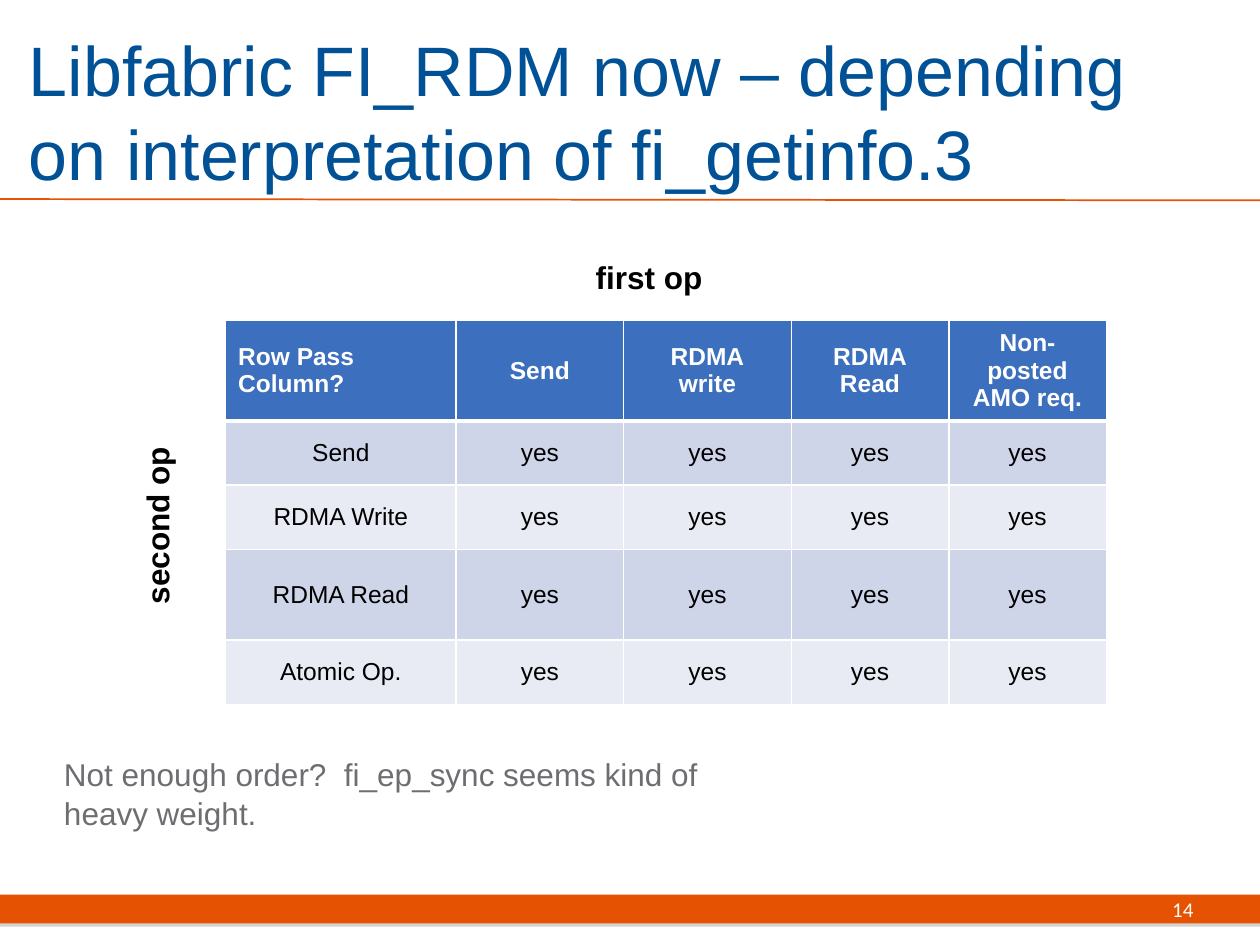
"""Build the slide on FI_RDM operation ordering as an editable table."""
import pptx
import pptx.util
import pptx.dml.color
import pptx.enum.shapes
import pptx.enum.text
import pptx.oxml
import pptx.oxml.ns
import lxml.etree

Inches, Pt = pptx.util.Inches, pptx.util.Pt
RGB = pptx.dml.color.RGBColor.from_string
ALIGN = pptx.enum.text.PP_ALIGN
MIDDLE = pptx.enum.text.MSO_ANCHOR.MIDDLE
qn = pptx.oxml.ns.qn
COLORS = {"white": "FFFFFF", "black": "000000", "orange": "E55302", "title": "005195",
          "gray": "6D6E71", "header": "3C6FBD", "odd": "CED5E8", "even": "E8EBF4"}


def write(tf, text, size, color, bold=False, align=ALIGN.LEFT, font="Arial", spacing=None):
    p = tf.paragraphs[0]
    p.alignment = align
    p.line_spacing = spacing
    for i, line in enumerate(text.split("\n")):
        if i:
            p.add_line_break()
        r = p.add_run()
        r.text = line
        r.font.size, r.font.name, r.font.bold = Pt(size), font, bold
        r.font.color.rgb = RGB(COLORS[color])


def add_text(left, top, width, height, text, size, color, rotation=0, anchor=None, **style):
    sp = s.shapes.add_textbox(Inches(left), Inches(top), Inches(width), Inches(height))
    sp.rotation = rotation
    tf = sp.text_frame
    tf.word_wrap = True
    tf.vertical_anchor = anchor
    write(tf, text, size, color, **style)


prs = pptx.Presentation()
prs.slide_width, prs.slide_height = Inches(10), Inches(7.5)
s = prs.slides.add_slide(prs.slide_layouts[5])

footer = s.shapes.add_shape(pptx.enum.shapes.MSO_SHAPE.RECTANGLE,
                            Inches(0), Inches(7.1), Inches(10), Inches(0.23))
footer.fill.solid()
footer.fill.fore_color.rgb = RGB(COLORS["orange"])
footer.line.fill.background()
footer.shadow.inherit = False
effects = footer._element.spPr.find(qn("a:effectLst"))
shadow = lxml.etree.SubElement(effects, qn("a:outerShdw"), blurRad="0", dist=str(Pt(1.8)),
                               dir="5400000", rotWithShape="0")
shade = lxml.etree.SubElement(shadow, qn("a:srgbClr"), val="808080")
lxml.etree.SubElement(shade, qn("a:alpha"), val="35000")

rule = s.shapes.add_connector(pptx.enum.shapes.MSO_CONNECTOR.STRAIGHT,
                              Inches(0), Inches(1.58), Inches(10), Inches(1.59))
rule.line.color.rgb = RGB(COLORS["orange"])
rule.line.width = Pt(1)
lxml.etree.SubElement(rule._element.spPr, qn("a:effectLst"))

title = s.shapes.title
title.left, title.top = Inches(0.13), Inches(0.25)
title.width, title.height = Inches(9.19), Inches(1.25)
title.text_frame.word_wrap = True
title.text_frame.auto_size = pptx.enum.text.MSO_AUTO_SIZE.NONE
title.text_frame.vertical_anchor = MIDDLE
write(title.text_frame, "Libfabric FI_RDM now – depending on interpretation of fi_getinfo.3",
      40, "title", spacing=Pt(48))

add_text(8.38, 7.1, 1.19, 0.23, "14", 12, "white", anchor=MIDDLE, align=ALIGN.RIGHT,
         font="Calibri")

headers = ["Row Pass Column?", "Send", "RDMA\nwrite", "RDMA\nRead", "Non-posted AMO req."]
second_ops = ["Send", "RDMA Write", "RDMA Read", "Atomic Op."]
rows = [headers] + [[op] + ["yes"] * 4 for op in second_ops]
widths = [1.83, 1.33, 1.33, 1.25, 1.25]
heights = [0.72, 0.51, 0.51, 0.72, 0.51]
table = s.shapes.add_table(len(rows), len(widths), Inches(1.79), Inches(2.54),
                           Inches(sum(widths)), Inches(sum(heights))).table
for column, width in zip(table.columns, widths):
    column.width = Inches(width)
for row, height in zip(table.rows, heights):
    row.height = Inches(height)

for i, row in enumerate(rows):
    for j, text in enumerate(row):
        cell = table.cell(i, j)
        is_header = i == 0
        cell.vertical_anchor = MIDDLE
        write(cell.text_frame, text, 14, "white" if is_header else "black", bold=is_header,
              align=ALIGN.LEFT if i == j == 0 else ALIGN.CENTER)
        tcPr = cell._tc.get_or_add_tcPr()
        for side in ("lnL", "lnR", "lnT", "lnB"):
            thick = (is_header and side == "lnB") or (i == 1 and side == "lnT")
            ln = lxml.etree.SubElement(tcPr, qn("a:" + side), w=str(Pt(3 if thick else 1)))
            fill = lxml.etree.SubElement(ln, qn("a:solidFill"))
            lxml.etree.SubElement(fill, qn("a:srgbClr"), val=COLORS["white"])
        cell.fill.solid()
        cell.fill.fore_color.rgb = RGB(COLORS["header" if is_header else "odd" if i % 2 else "even"])

add_text(4.63, 2, 3.44, 0.41, "first op", 18, "black", bold=True)
add_text(-0.47, 2.97, 3.44, 0.41, "second op", 18, "black", rotation=270, bold=True)
add_text(0.41, 5.94, 5.7, 0.71, "Not enough order?  fi_ep_sync seems kind of heavy weight.",
         18, "gray", spacing=Pt(22))

prs.save("out.pptx")
